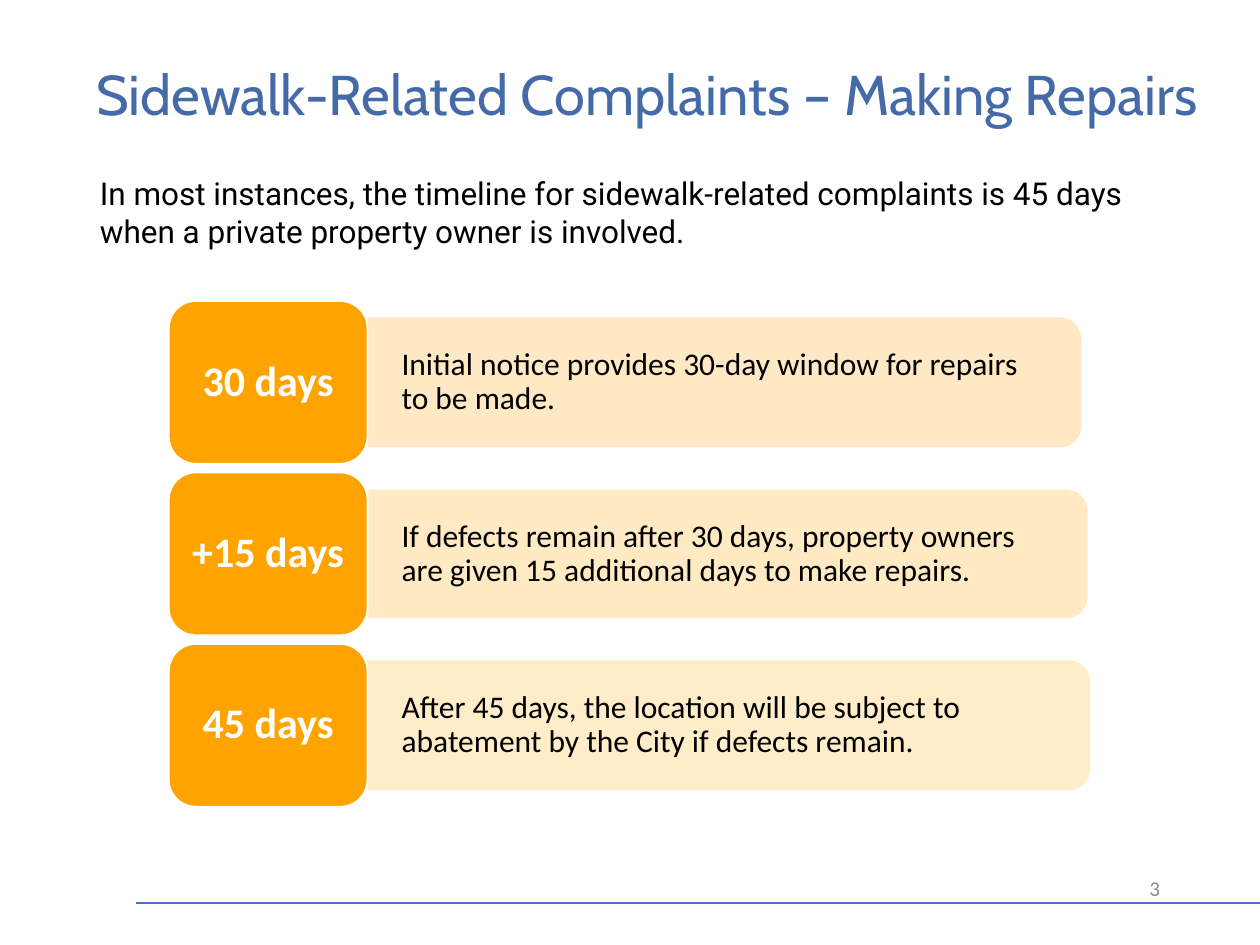
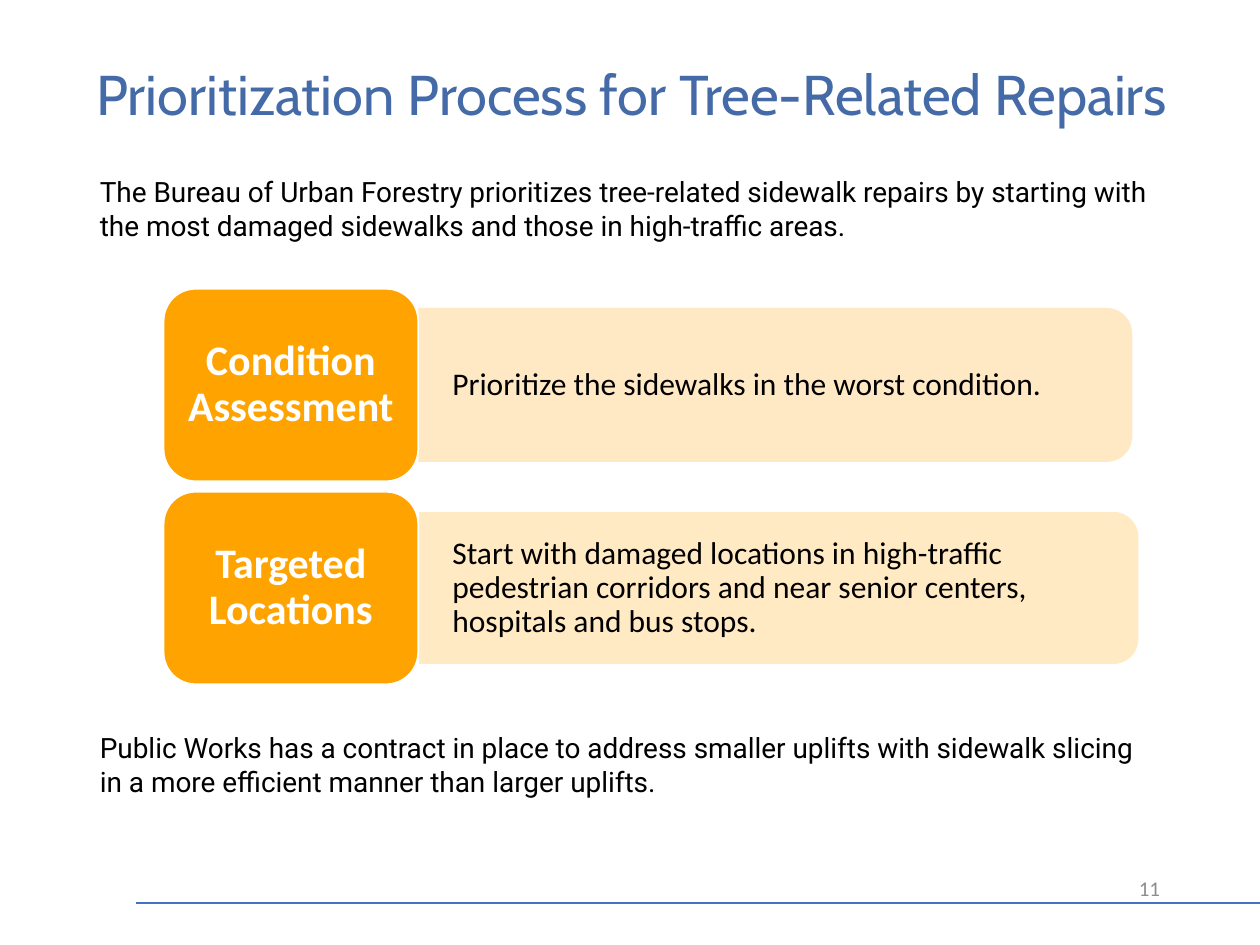
"""Build two slides on sidewalk repair timelines and priorities."""
from lxml.etree import SubElement
from pptx import Presentation
from pptx.dml.color import RGBColor
from pptx.enum.shapes import MSO_CONNECTOR, MSO_SHAPE
from pptx.enum.text import MSO_ANCHOR, PP_ALIGN
from pptx.oxml.ns import qn
from pptx.util import Pt

COLORS = {
    "title": "446BA8",
    "rule": "4472C4",
    "badge": "FFA300",
    "panel": "FFEAC4",
    "white": "FFFFFF",
    "body": "000000",
    "number": "8C8C8C",
}
TINT = ("badge", 23, False)
CREAM = ("panel", 100, True)
SOFT_CREAM = ("panel", 90, False)


class Deck:
    """Holds the shared style and the current slide."""

    def __init__(self):
        self.presentation = Presentation()
        self.presentation.slide_width = Pt(720)
        self.presentation.slide_height = Pt(540)
        self.slide = None

    def color(self, name):
        return RGBColor.from_string(COLORS[name])

    def start(self, title, number):
        blank = self.presentation.slide_layouts[6]
        self.slide = self.presentation.slides.add_slide(blank)
        self.rule(78, 516, 720)
        self.text(title, (48, 19, 648, 68), "Cabin", 32, "title")
        self.text(number, (508, 493, 162, 29), "Calibri", 12, "number",
                  align=PP_ALIGN.RIGHT)

    def rule(self, left, top, right):
        rule = self.slide.shapes.add_connector(
            MSO_CONNECTOR.STRAIGHT, Pt(left), Pt(top), Pt(right), Pt(top))
        rule.line.color.rgb = self.color("rule")
        rule.line.width = Pt(1.5)
        SubElement(rule._element.spPr, qn("a:effectLst"))

    def fill_frame(self, frame, text, font, size, color, align=PP_ALIGN.LEFT,
                   anchor=MSO_ANCHOR.MIDDLE, bold=False, spacing=1.0,
                   inset=(7.2, 3.6)):
        frame.word_wrap = True
        frame.vertical_anchor = anchor
        frame.margin_left = frame.margin_right = Pt(inset[0])
        frame.margin_top = frame.margin_bottom = Pt(inset[1])
        paragraph = frame.paragraphs[0]
        paragraph.alignment = align
        paragraph.line_spacing = spacing
        run = paragraph.add_run()
        run.text = text
        run.font.name = font
        run.font.size = Pt(size)
        run.font.bold = bold
        run.font.color.rgb = self.color(color)

    def text(self, text, box, font, size, color, **style):
        frame = self.slide.shapes.add_textbox(*map(Pt, box)).text_frame
        self.fill_frame(frame, text, font, size, color, **style)

    def body(self, text, top, size):
        self.text(text, (50, top, 620, 58), "Roboto", size, "body",
                  anchor=MSO_ANCHOR.TOP)

    def shape(self, kind, box, fill, outlined=True):
        shape = self.slide.shapes.add_shape(kind, *map(Pt, box))
        shape.shadow.inherit = False
        shape.fill.solid()
        shape.fill.fore_color.rgb = self.color(fill)
        if outlined:
            shape.line.color.rgb = self.color("white")
            shape.line.width = Pt(1)
        else:
            shape.line.fill.background()
        return shape

    def panel(self, text, left, middle, width, height, look):
        fill, opacity, outlined = look
        upright = (left + (width - height) / 2, middle - width / 2, height, width)
        panel = self.shape(MSO_SHAPE.ROUND_2_SAME_RECTANGLE, upright, fill, outlined)
        panel.rotation = 90
        if opacity < 100:
            tone = panel._element.spPr.find(qn("a:solidFill"))[0]
            SubElement(tone, qn("a:alpha"), val=str(opacity * 1000))
        label_height = height * 0.9
        self.text(text, (left, middle - label_height / 2, width - 4, label_height),
                  "Calibri", 18, "body", spacing=0.9, inset=(19.5, 10))

    def badge(self, text, box):
        badge = self.shape(MSO_SHAPE.ROUNDED_RECTANGLE, box, "badge")
        self.fill_frame(badge.text_frame, text, "Calibri", 24, "white", bold=True,
                        align=PP_ALIGN.CENTER, spacing=0.9, inset=(6, 3.6))

    def steps(self, rows, left, top, width, height, gap):
        for index, (label, detail, panel_width, look) in enumerate(rows):
            row_top = top + index * (height + gap)
            self.panel(detail, left + width, row_top + height / 2,
                       panel_width, height * 0.8, look)
            self.badge(label, (left, row_top, width, height))


def main():
    deck = Deck()

    deck.start("Sidewalk-Related Complaints – Making Repairs", "3")
    deck.body("In most instances, the timeline for sidewalk-related complaints is "
              "45 days when a private property owner is involved.", 96, 18)
    deadlines = [
        ("30 days", "Initial notice provides 30-day window for repairs to be made.",
         408, TINT),
        ("+15 days", "If defects remain after 30 days, property owners are given "
         "15 additional days to make repairs.", 412, CREAM),
        ("45 days", "After 45 days, the location will be subject to abatement by "
         "the City if defects remain.", 413, SOFT_CREAM),
    ]
    deck.steps(deadlines, left=96.5, top=172, width=113.5, height=93, gap=5)

    deck.start("Prioritization Process for Tree-Related Repairs", "11")
    deck.body("The Bureau of Urban Forestry prioritizes tree-related sidewalk repairs "
              "by starting with the most damaged sidewalks and those in high-traffic "
              "areas.", 96.5, 16)
    priorities = [
        ("Condition Assessment", "Prioritize the sidewalks in the worst condition.",
         408, TINT),
        ("Targeted Locations", "Start with damaged locations in high-traffic "
         "pedestrian corridors and near senior centers, hospitals and bus stops.",
         412, CREAM),
    ]
    deck.steps(priorities, left=93.5, top=165, width=145.5, height=110, gap=6)
    deck.body("Public Works has a contract in place to address smaller uplifts with "
              "sidewalk slicing in a more efficient manner than larger uplifts.",
              414, 16)

    deck.presentation.save("out.pptx")


if __name__ == "__main__":
    main()
